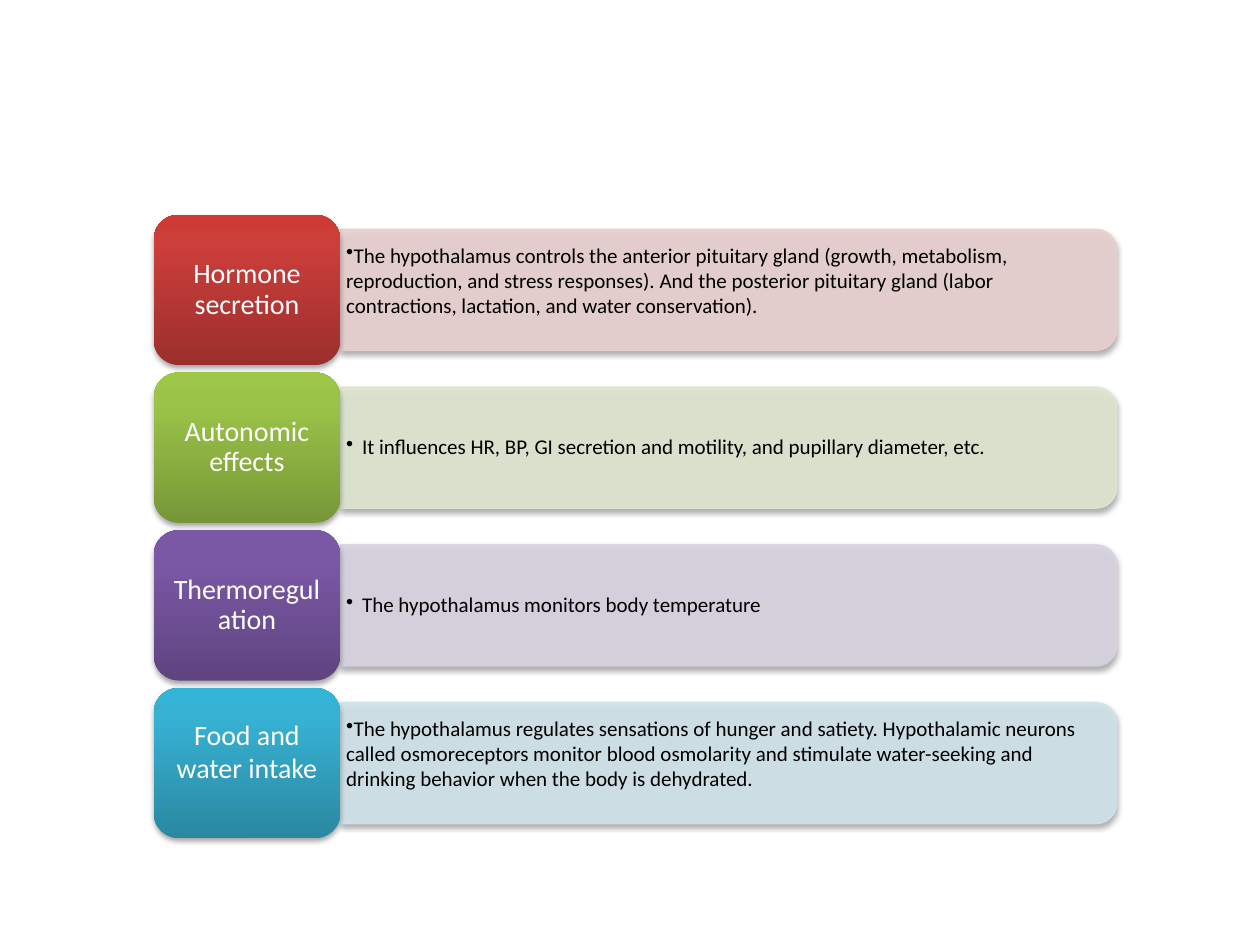
from dataclasses import dataclass

from lxml import etree
from pptx import Presentation
from pptx.dml.color import RGBColor
from pptx.enum import shapes, text
from pptx.oxml.ns import qn
from pptx.util import Cm, Pt


@dataclass(frozen=True)
class Theme:
    font: str = "Calibri"
    label_size: int = 16
    detail_size: int = 12
    label_color: str = "FFFFFF"
    detail_color: str = "000000"
    shadow_color: str = "000000"
    bar_opacity: int = 90
    shadow_opacity: int = 35


@dataclass(frozen=True)
class Function:
    """One role of the hypothalamus; gradient runs from bottom to top."""
    label: str
    detail: str
    gradient: tuple[str, str, str]
    tint: str
    hanging: float = 0
    detail_spacing: float = 1.0
    label_spacing: float = 0.9
    detail_lift: float = 0
    label_lift: float = 0


THEME = Theme()
LEFT, TOP, PITCH = 3.1, 4.33, 3.18
TILE_W, TILE_H = 3.76, 3.03
BAR_W, BAR_H = 15.65, 2.44
DETAIL_W, DETAIL_H = 15.52, 2.18
GRADIENT_STOPS = (0, 80, 100)

FUNCTIONS = (
    Function(
        "Hormone secretion",
        "The hypothalamus controls the anterior pituitary gland (growth, metabolism, "
        "reproduction, and stress responses). And the posterior pituitary gland (labor "
        "contractions, lactation, and water conservation).",
        ("9C2F2D", "CB3E3A", "CE3B37"), "E8D0D0", detail_lift=0.4),
    Function(
        "Autonomic effects",
        "It influences HR, BP, GI secretion and motility, and pupillary diameter, etc.",
        ("779737", "9BC348", "9DC746"), "DEE7D1", hanging=0.32, detail_spacing=0.9),
    Function(
        "Thermoregulation",
        "The hypothalamus monitors body temperature",
        ("5F4480", "7B58A6", "7C57A8"), "D8D3E0", hanging=0.32, detail_spacing=0.9),
    Function(
        "Food and water intake",
        "The hypothalamus regulates sensations of hunger and satiety. Hypothalamic neurons "
        "called osmoreceptors monitor blood osmolarity and stimulate water-seeking and "
        "drinking behavior when the body is dehydrated.",
        ("2A88A2", "37B1D2", "34B4D6"), "D0E3EA",
        detail_lift=0.4, label_spacing=1.0, label_lift=0.5),
)


def add_color(parent, color: str, opacity: int = 100) -> None:
    rgb = etree.SubElement(parent, qn("a:srgbClr"), val=color)
    if opacity < 100:
        etree.SubElement(rgb, qn("a:alpha"), val=str(opacity * 1000))


def add_shadow(shape) -> None:
    shape.shadow.inherit = False
    effects = shape._element.spPr.find(qn("a:effectLst"))
    shadow = etree.SubElement(effects, qn("a:outerShdw"), blurRad=str(Pt(3.1)),
                              dist=str(Pt(1.8)), dir="5400000", rotWithShape="0")
    add_color(shadow, THEME.shadow_color, THEME.shadow_opacity)


def write(frame, content: str, *, size: int, color: str, align, spacing: float,
          margin: float, lift: float = 0, bullet: bool = False, hanging: float = 0) -> None:
    """Fill a frame with one paragraph; lift is extra bottom margin, in cm."""
    frame.word_wrap = True
    frame.vertical_anchor = text.MSO_ANCHOR.MIDDLE
    frame.margin_left = frame.margin_right = Cm(margin)
    frame.margin_top, frame.margin_bottom = Cm(0.08), Cm(0.08 + lift)
    paragraph = frame.paragraphs[0]
    paragraph.alignment = align
    paragraph.line_spacing = spacing
    run = paragraph.add_run()
    run.text = content
    run.font.name, run.font.size = THEME.font, Pt(size)
    run.font.color.rgb = RGBColor.from_string(color)
    if bullet:
        properties = paragraph._p.get_or_add_pPr()
        properties.set("marL", str(Cm(hanging)))
        properties.set("indent", str(-Cm(hanging)))
        etree.SubElement(properties, qn("a:buChar"), char="•")


def add_bar(slide, function: Function, middle: float) -> None:
    """Draw the tinted bar, an upright shape turned so its round end faces right."""
    center = LEFT + TILE_W + BAR_W / 2
    bar = slide.shapes.add_shape(
        shapes.MSO_SHAPE.ROUND_2_SAME_RECTANGLE,
        Cm(center - BAR_H / 2), Cm(middle - BAR_W / 2), Cm(BAR_H), Cm(BAR_W))
    bar.rotation = 90
    bar.line.width = Pt(0.75)
    for fill in (bar.fill, bar.line.fill):
        fill.solid()
        fill.fore_color.rgb = RGBColor.from_string(function.tint)
    for rgb in bar._element.spPr.iter(qn("a:srgbClr")):
        etree.SubElement(rgb, qn("a:alpha"), val=str(THEME.bar_opacity * 1000))
    add_shadow(bar)

    detail = slide.shapes.add_textbox(Cm(LEFT + TILE_W), Cm(middle - DETAIL_H / 2),
                                      Cm(DETAIL_W), Cm(DETAIL_H))
    write(detail.text_frame, function.detail, size=THEME.detail_size,
          color=THEME.detail_color, align=text.PP_ALIGN.LEFT,
          spacing=function.detail_spacing, margin=0.12, lift=function.detail_lift,
          bullet=True, hanging=function.hanging)


def add_tile(slide, function: Function, middle: float) -> None:
    tile = slide.shapes.add_shape(shapes.MSO_SHAPE.ROUNDED_RECTANGLE, Cm(LEFT),
                                  Cm(middle - TILE_H / 2), Cm(TILE_W), Cm(TILE_H))
    tile.fill.gradient()
    tile.fill.gradient_angle = 90
    stops = tile._element.spPr.find(qn("a:gradFill")).find(qn("a:gsLst"))
    for stop in list(stops):
        stops.remove(stop)
    for position, color in zip(GRADIENT_STOPS, function.gradient):
        add_color(etree.SubElement(stops, qn("a:gs"), pos=str(position * 1000)), color)
    tile.line.fill.background()
    add_shadow(tile)
    write(tile.text_frame, function.label, size=THEME.label_size,
          color=THEME.label_color, align=text.PP_ALIGN.CENTER,
          spacing=function.label_spacing, margin=0.17, lift=function.label_lift)


def main() -> None:
    deck = Presentation()
    deck.slide_width, deck.slide_height = Cm(25.4), Cm(19.05)
    slide = deck.slides.add_slide(deck.slide_layouts[6])
    for row, function in enumerate(FUNCTIONS):
        middle = TOP + TILE_H / 2 + row * PITCH
        add_bar(slide, function, middle)
        add_tile(slide, function, middle)
    deck.save("out.pptx")


if __name__ == "__main__":
    main()
